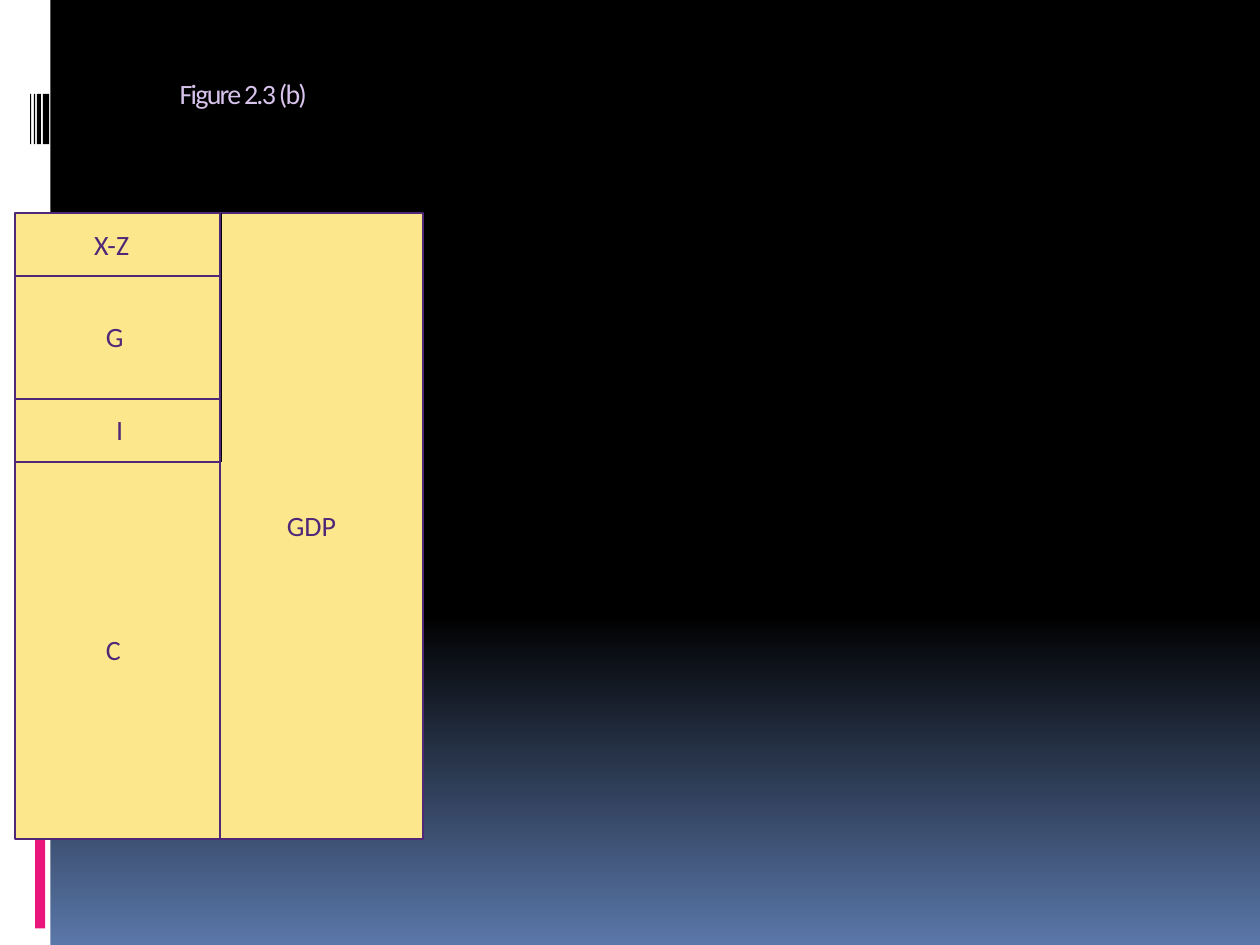
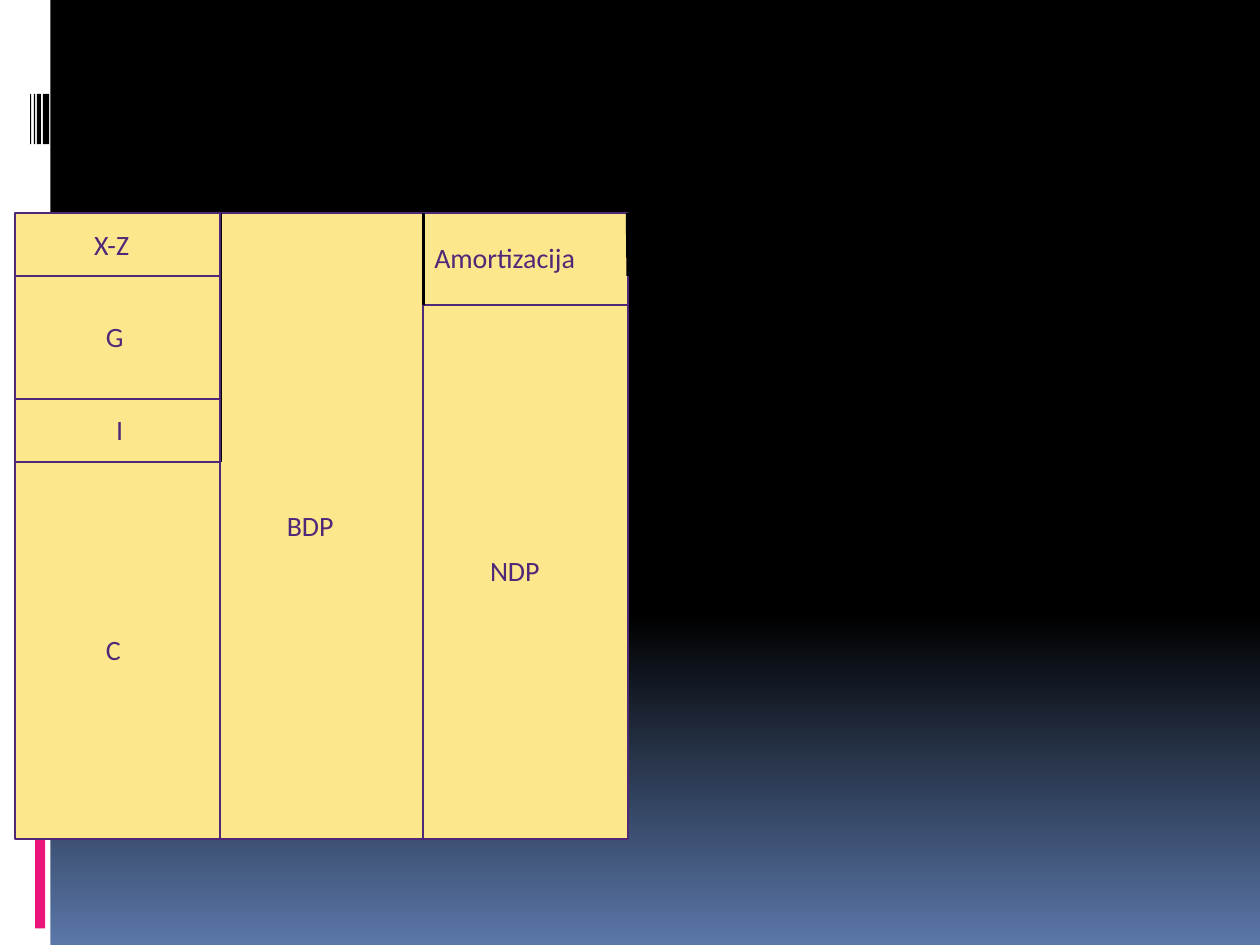
from copy import deepcopy
from pptx import Presentation
from pptx import util as u
from pptx.dml.color import RGBColor
from pptx.enum import shapes, text
from pptx.oxml.ns import qn

Pt = u.Pt
GOLD, PLUM, LILAC = "FCE78C", "502878", "D7C3EB"
BLACK, WHITE, PINK, BLUE = "000000", "FFFFFF", "EA157A", "5A77A9"


def rgb(code):
    return RGBColor.from_string(code)


def write(box, words, color):
    frame = box.text_frame
    frame.vertical_anchor = text.MSO_ANCHOR.TOP
    run = frame.paragraphs[0].add_run()
    run.text = words
    run.font.size, run.font.name = Pt(16), "Calibri"
    run.font.color.rgb = rgb(color)
    return run


prs = Presentation()
prs.slide_width, prs.slide_height = Pt(720), Pt(540)

# Shared background: black down to 65 %, then fading to blue
fill = prs.slide_master.background.fill
fill.gradient()
fill.gradient_angle = 270
stops = prs.slide_master.element.find(".//" + qn("a:gsLst"))
stops.append(deepcopy(stops[-1]))
for stop, (pos, tint) in zip(fill.gradient_stops, [(0, BLACK), (0.65, BLACK), (1, BLUE)]):
    stop.position = pos
    stop.color.rgb = rgb(tint)

# Shared left band, pink bar and barcode: left, top, width, height, colour
bars = [(0, 0, 28.8, 540, WHITE), (20.1, 397.5, 5.7, 133, PINK)]
bars += [(x, 53.6, w, 28.8, BLACK)
         for x, w in [(24.5, 3.6), (21.1, 2.3), (19.4, 0.8), (17.3, 0.5)]]

# Chart grid: column edges and row edges
LEFT, MID, RIGHT, FAR = 8.6, 125.8, 241.9, 359
TOP, NET, BASE = 121.7, 174.2, 479.5
rows = [TOP, 157.7, 228.2, 264.2, BASE]

# Blocks: words, left, top, right, bottom, label left, top, width
stack = [(name, LEFT, a, MID, b, *spot) for name, a, b, spot in zip(
    ["X-Z", "G", "I", "C"], rows, rows[1:],
    [(53.8, 129.9, 26), (60.5, 182.5, 13), (66.4, 235.6, 4.4), (60.5, 361.7, 11.5)])]
gdp = (MID, TOP, RIGHT, BASE, 163.9, 290.5, 34)
wear = ("Amortizacija", RIGHT, TOP, FAR, NET, 248.2, 137.4, 88)
net = ("NDP", RIGHT, NET, FAR, BASE, 280, 316.4, 34)

# Hairlines drawn with the tall block and with the depreciation block
seams = [(MID, y, MID, TOP) for y in rows[3:0:-1]]
edges = [(RIGHT, TOP, RIGHT, NET), (FAR - 0.4, TOP, FAR, rows[1])]

pages = [
    ("Figure 2.3 (b)", [("GDP", *gdp)] + stack[::-1]),
    (None, [net, ("BDP", *gdp), stack[3], wear] + stack[2::-1]),
]

for title, blocks in pages:
    slide = prs.slides.add_slide(prs.slide_layouts[6])

    for x, y, w, h, tint in bars:
        bar = slide.shapes.add_shape(shapes.MSO_SHAPE.RECTANGLE, Pt(x), Pt(y), Pt(w), Pt(h))
        bar.shadow.inherit = False
        bar.fill.solid()
        bar.fill.fore_color.rgb = rgb(tint)
        bar.line.fill.background()

    # Title, indented and tightly spaced
    if title:
        head = slide.shapes.add_textbox(Pt(72), Pt(40.3), Pt(612), Pt(72))
        head.text_frame.word_wrap = True
        run = write(head, title, LILAC)
        run.font._element.set("spc", "-100")
        head.text_frame.paragraphs[0]._p.get_or_add_pPr().set("marL", str(Pt(23.6)))

    # Blocks, each grouped with its hairlines and label
    for name, x, y, right, base, tx, ty, tw in blocks:
        group = slide.shapes.add_group_shape().shapes
        rect = group.add_shape(shapes.MSO_SHAPE.RECTANGLE,
                               Pt(x), Pt(y), Pt(right - x), Pt(base - y))
        rect.shadow.inherit = False
        rect.fill.solid()
        rect.fill.fore_color.rgb = rgb(GOLD)
        rect.line.color.rgb = rgb(PLUM)
        rect.line.width = Pt(1.13)

        lines = seams if x == MID else edges if name == wear[0] else []
        for ends in lines:
            line = group.add_connector(shapes.MSO_CONNECTOR.STRAIGHT, *map(Pt, ends))
            line.line.color.rgb = rgb(BLACK)
            line.line.width = Pt(0)
            props = line._element.spPr
            props.append(props.makeelement(qn("a:effectLst"), {}))

        label = group.add_textbox(Pt(tx), Pt(ty), Pt(tw), Pt(19.4))
        frame = label.text_frame
        frame.margin_left = frame.margin_right = frame.margin_top = frame.margin_bottom = 0
        frame.word_wrap = False
        frame.auto_size = text.MSO_AUTO_SIZE.SHAPE_TO_FIT_TEXT
        write(label, name, PLUM)

prs.save("out.pptx")
